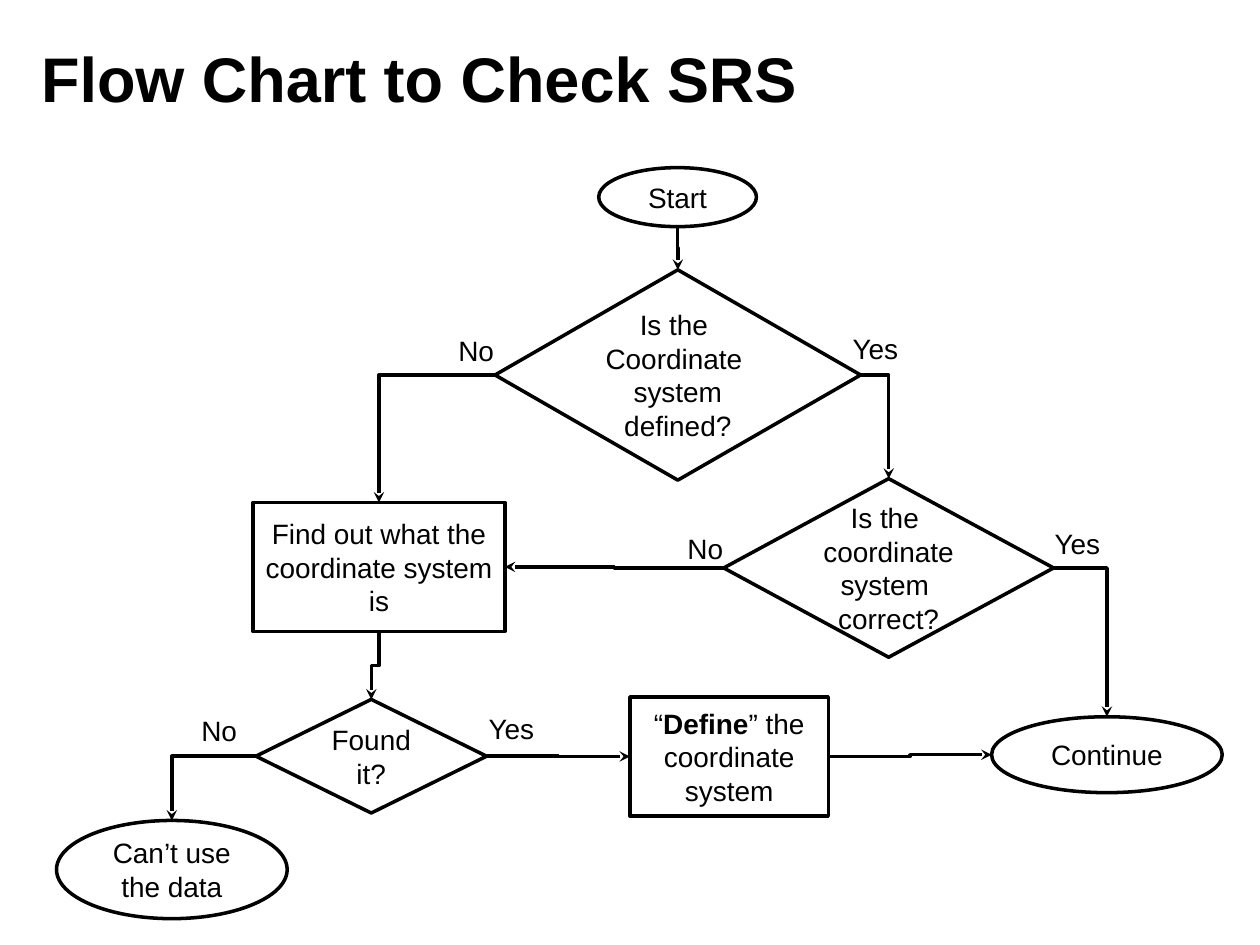
import pptx
import pptx.dml.color
import pptx.enum.shapes
import pptx.enum.text
import pptx.oxml
import pptx.oxml.ns
import pptx.util

Cm = pptx.util.Cm
Pt = pptx.util.Pt
SHAPE = pptx.enum.shapes.MSO_SHAPE
ALIGN = pptx.enum.text.PP_ALIGN
ANCHOR = pptx.enum.text.MSO_ANCHOR

BLACK, WHITE = "000000", "FFFFFF"
FONT = "Arial"
LINE_WIDTH = 2
BODY_SIZE, TITLE_SIZE = 16, 36
LABEL_SIZE = (1.55, 0.94)

# Content: lengths in cm, a text is paragraphs of (wording, bold) runs
TITLE = ([[("Flow Chart to Check SRS", True)]], (0.58, 0.38, 20.4, 2.36))

STEPS = {
    "start": (SHAPE.OVAL, (12.07, 3.38, 3.18, 1.19), [[("Start", False)]]),
    "defined": (SHAPE.DIAMOND, (9.98, 5.44, 7.37, 4.24),
                [[("Is the ", False)], [("Coordinate ", False)],
                 [("system defined?", False)]]),
    "find out": (SHAPE.RECTANGLE, (5.1, 10.13, 5.08, 2.6),
                 [[("Find out what the coordinate system is", False)]]),
    "correct": (SHAPE.DIAMOND, (14.59, 9.65, 6.65, 3.6),
                [[("Is the ", False)], [("coordinate system ", False)],
                 [("correct?", False)]]),
    "found": (SHAPE.DIAMOND, (5.16, 14.1, 4.65, 2.29), [[("Found it?", False)]]),
    "define": (SHAPE.RECTANGLE, (12.7, 14.05, 4, 2.4),
               [[("“", False), ("Define", True),
                 ("” the coordinate system", False)]]),
    "continue": (SHAPE.OVAL, (19.99, 14.45, 4.65, 1.53), [[("Continue", False)]]),
    "cannot use": (SHAPE.OVAL, (1.14, 16.54, 4.65, 1.98),
                   [[("Can’t use the data", False)]]),
}

# From step and side, to step and side
ARROWS = [
    ("start", "bottom", "defined", "top"),
    ("defined", "left", "find out", "top"),
    ("defined", "right", "correct", "top"),
    ("correct", "left", "find out", "right"),
    ("correct", "right", "continue", "top"),
    ("find out", "bottom", "found", "top"),
    ("found", "left", "cannot use", "top"),
    ("found", "right", "define", "left"),
    ("define", "right", "continue", "left"),
]

ANSWERS = [
    ("No", 8.99, 6.6), ("Yes", 16.94, 6.55),
    ("No", 13.61, 10.59), ("Yes", 21.01, 10.49),
    ("No", 3.81, 14.25), ("Yes", 9.6, 14.22),
]

SIDES = {"top": (0.5, 0), "bottom": (0.5, 1), "left": (0, 0.5), "right": (1, 0.5)}


def color(hex_code):
    return pptx.dml.color.RGBColor.from_string(hex_code)


def write(frame, paragraphs, size, align, anchor):
    frame.word_wrap = True
    frame.vertical_anchor = anchor
    for index, runs in enumerate(paragraphs):
        paragraph = frame.add_paragraph() if index else frame.paragraphs[0]
        paragraph.alignment = align
        for wording, bold in runs:
            run = paragraph.add_run()
            run.text = wording
            run.font.name = FONT
            run.font.size = Pt(size)
            run.font.bold = bold
            run.font.color.rgb = color(BLACK)


def add_text(slide, box, paragraphs, size, anchor):
    frame = slide.shapes.add_textbox(*map(Cm, box)).text_frame
    write(frame, paragraphs, size, ALIGN.LEFT, anchor)


def set_line(line):
    line.color.rgb = color(BLACK)
    line.width = Pt(LINE_WIDTH)


def add_step(slide, preset, box, paragraphs):
    step = slide.shapes.add_shape(preset, *map(Cm, box))
    step.shadow.inherit = False
    step.fill.solid()
    step.fill.fore_color.rgb = color(WHITE)
    set_line(step.line)
    write(step.text_frame, paragraphs, BODY_SIZE, ALIGN.CENTER, ANCHOR.MIDDLE)


def side_point(step, side):
    left, top, width, height = STEPS[step][1]
    across, down = SIDES[side]
    return left + across * width, top + down * height


def add_arrow(slide, source, source_side, target, target_side):
    x1, y1 = side_point(source, source_side)
    x2, y2 = side_point(target, target_side)
    downward = source_side == "bottom"
    if downward:
        # A vertical elbow is a horizontal one turned by 90 degrees
        mid_x, mid_y = (x1 + x2) / 2, (y1 + y2) / 2
        half_length, half_shift = (y2 - y1) / 2, (x1 - x2) / 2
        x1, x2 = mid_x - half_length, mid_x + half_length
        y1, y2 = mid_y - half_shift, mid_y + half_shift
    arrow = slide.shapes.add_connector(
        pptx.enum.shapes.MSO_CONNECTOR.ELBOW, Cm(x1), Cm(y1), Cm(x2), Cm(y2))
    set_line(arrow.line)
    properties = arrow._element.spPr
    if downward:
        properties.find(pptx.oxml.ns.qn("a:xfrm")).set("rot", "5400000")
    elif target_side == "top":
        properties.find(pptx.oxml.ns.qn("a:prstGeom")).set("prst", "bentConnector2")
    namespace = pptx.oxml.ns.nsdecls("a")
    properties.find(pptx.oxml.ns.qn("a:ln")).append(
        pptx.oxml.parse_xml(f'<a:tailEnd {namespace} type="stealth"/>'))
    properties.append(pptx.oxml.parse_xml(f"<a:effectLst {namespace}/>"))


def main():
    presentation = pptx.Presentation()
    presentation.slide_width, presentation.slide_height = Cm(25.4), Cm(19.05)
    slide = presentation.slides.add_slide(presentation.slide_layouts[6])

    # Title
    title, title_box = TITLE
    add_text(slide, title_box, title, TITLE_SIZE, ANCHOR.MIDDLE)

    # Flow chart
    for step in STEPS.values():
        add_step(slide, *step)
    for arrow in ARROWS:
        add_arrow(slide, *arrow)

    # Answers beside the arrows
    for answer, left, top in ANSWERS:
        add_text(slide, (left, top, *LABEL_SIZE), [[(answer, False)]],
                 BODY_SIZE, ANCHOR.TOP)

    presentation.save("out.pptx")


if __name__ == "__main__":
    main()
